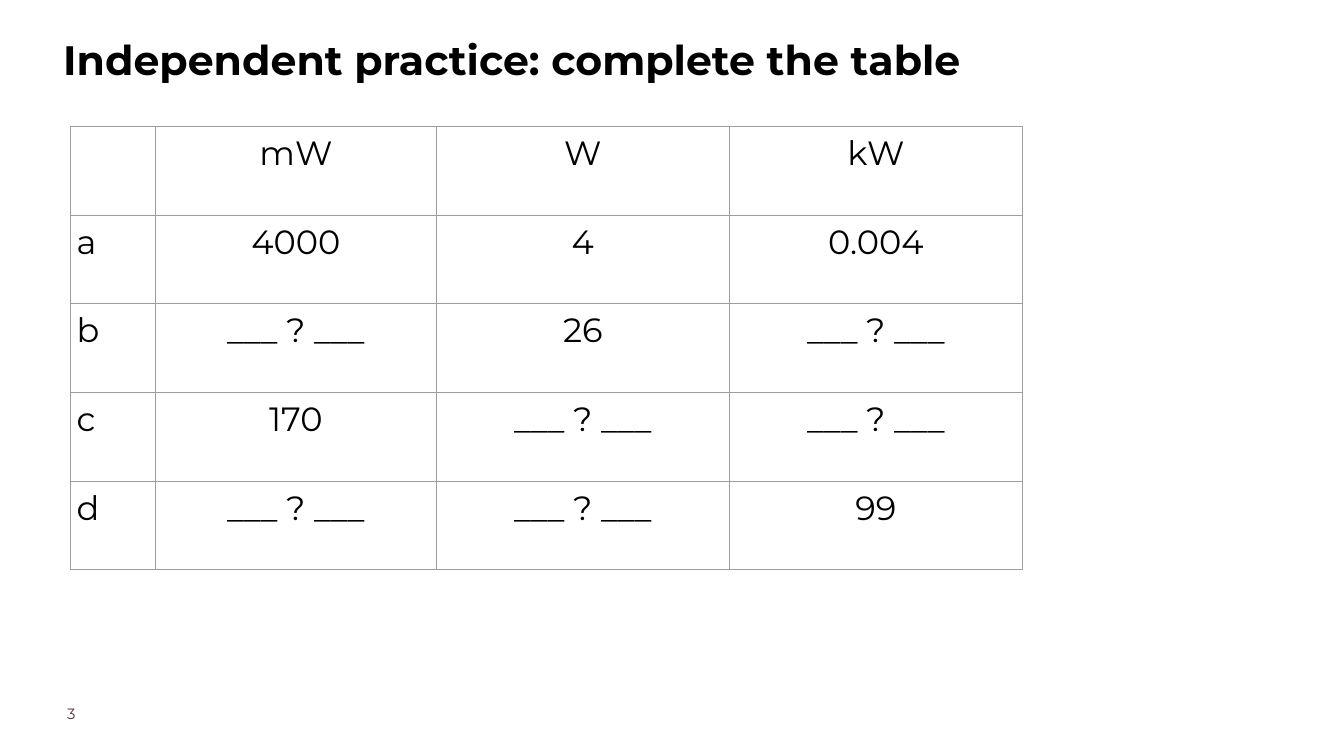
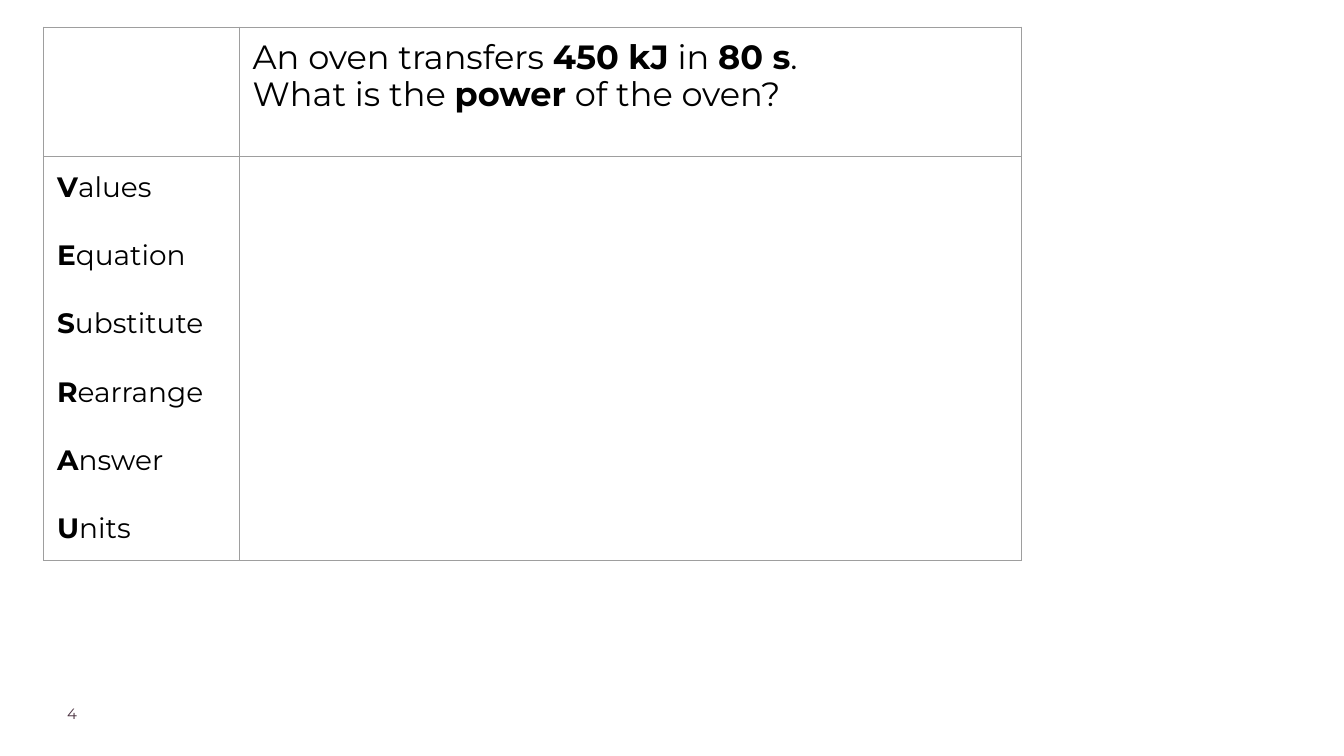
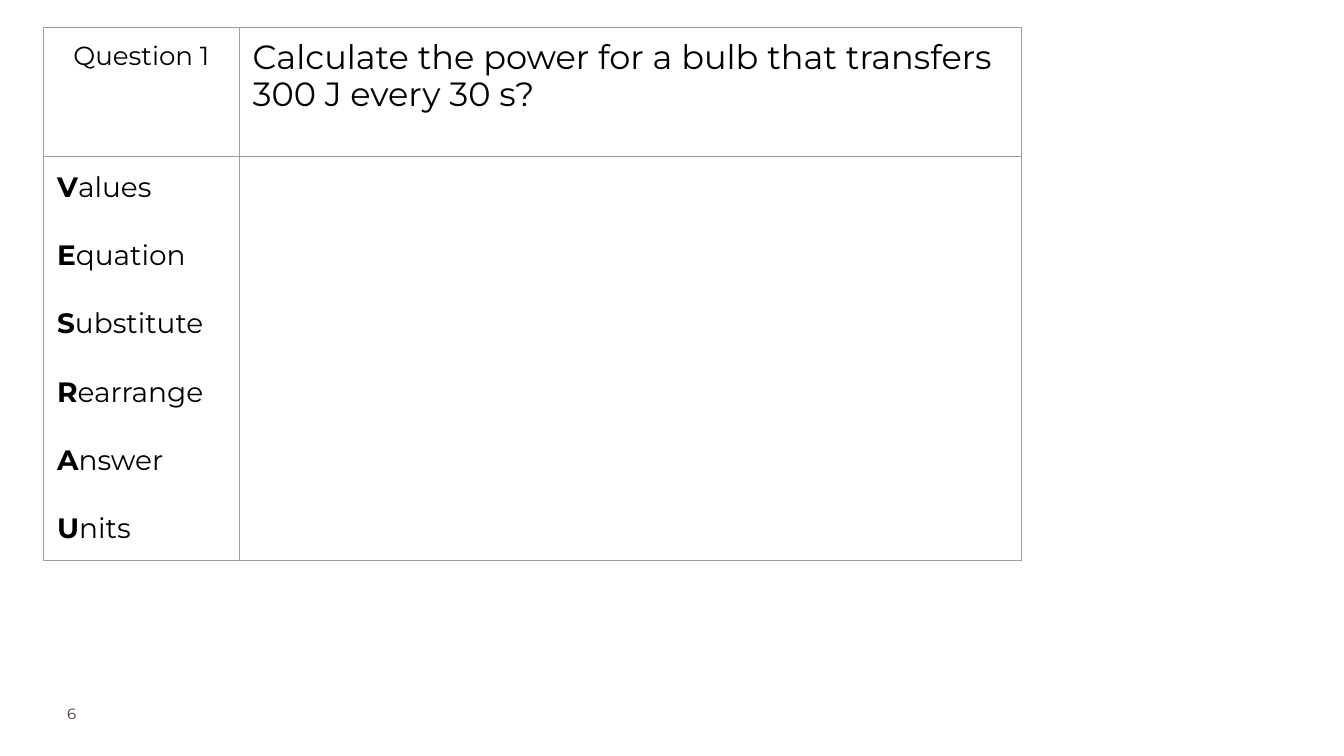
from dataclasses import dataclass

from lxml.etree import SubElement
from pptx import Presentation
from pptx.dml.color import RGBColor
from pptx.enum.text import MSO_ANCHOR, PP_ALIGN as Align
from pptx.oxml.ns import qn
from pptx.util import Pt

FONT = "Montserrat"
BLACK = "000000"
PLUM = "4B3241"
GREY = "9E9E9E"
WHITE = "FFFFFF"
BORDER_WIDTH = 0.75
BLANK_LAYOUT = 6
GAP = "___ ? ___"


@dataclass(frozen=True)
class TextStyle:
    size: float
    color: str = BLACK
    bold: bool = False
    align: Align = Align.LEFT
    line_spacing: float = 1.0
    space_between: float = 0


@dataclass(frozen=True)
class CellText:
    lines: tuple[str, ...]
    style: TextStyle


@dataclass(frozen=True)
class Grid:
    left: float
    top: float
    columns: tuple[float, ...]
    rows: tuple[float, ...]
    inset: float


TITLE = TextStyle(44, bold=True, line_spacing=1.15)
PAGE_NUMBER = TextStyle(16, PLUM)
ROW_LABEL = TextStyle(36)
VALUE = TextStyle(36, align=Align.CENTER)
QUESTION = TextStyle(36, line_spacing=0.9)
QUESTION_LABEL = TextStyle(28, align=Align.CENTER)
STEP = TextStyle(30, space_between=36.5)

UNITS_GRID = Grid(75, 135.4, (91.5, 301, 314, 314), (95,) * 5, 7.2)
PROBLEM_GRID = Grid(46.8, 28.8, (209.5, 838), (139.2, 432), 14.4)

UNIT_ROWS = (
    ("", "mW", "W", "kW"),
    ("a", "4000", "4", "0.004"),
    ("b", GAP, "26", GAP),
    ("c", "170", GAP, GAP),
    ("d", GAP, GAP, "99"),
)
STEPS = ("Values", "Equation", "Substitute", "Rearrange", "Answer", "Units")


def rgb(color: str) -> RGBColor:
    return RGBColor.from_string(color)


def write(frame, lines: tuple[str, ...], style: TextStyle) -> None:
    """Fill a text frame; ** toggles bold and a newline breaks the line."""
    for index, line in enumerate(lines):
        paragraph = frame.add_paragraph() if index else frame.paragraphs[0]
        paragraph.alignment = style.align
        paragraph.line_spacing = style.line_spacing
        paragraph.space_before = Pt(style.space_between if index else 0)
        font = paragraph.font
        font.name, font.size, font.bold = FONT, Pt(style.size), style.bold
        font.color.rgb = rgb(style.color)
        for number, piece in enumerate(line.split("**")):
            for part_number, part in enumerate(piece.split("\n")):
                if part_number:
                    paragraph.add_line_break()
                if part:
                    run = paragraph.add_run()
                    run.text = part
                    if number % 2:
                        run.font.bold = True


def add_text(slide, left: float, top: float, width: float, height: float,
             text: str, style: TextStyle) -> None:
    box = slide.shapes.add_textbox(Pt(left), Pt(top), Pt(width), Pt(height))
    frame = box.text_frame
    frame.word_wrap = True
    frame.margin_left = frame.margin_right = Pt(0)
    frame.margin_top = frame.margin_bottom = Pt(0)
    write(frame, (text,), style)


def add_borders(cell) -> None:
    properties = cell._tc.get_or_add_tcPr()
    for position, side in enumerate(("lnL", "lnR", "lnT", "lnB")):
        line = properties.makeelement(qn(f"a:{side}"), {"w": str(Pt(BORDER_WIDTH))})
        fill = SubElement(line, qn("a:solidFill"))
        SubElement(fill, qn("a:srgbClr"), val=GREY)
        properties.insert(position, line)


def add_grid(slide, grid: Grid, contents: list[list[CellText]]) -> None:
    table = slide.shapes.add_table(
        len(grid.rows), len(grid.columns), Pt(grid.left), Pt(grid.top),
        Pt(sum(grid.columns)), Pt(sum(grid.rows))).table
    table.first_row = table.horz_banding = False
    for column, width in zip(table.columns, grid.columns):
        column.width = Pt(width)
    for row, height, texts in zip(table.rows, grid.rows, contents):
        row.height = Pt(height)
        for cell, text in zip(row.cells, texts):
            cell.fill.background()
            cell.vertical_anchor = MSO_ANCHOR.TOP
            cell.margin_left = cell.margin_right = Pt(grid.inset)
            cell.margin_top = cell.margin_bottom = Pt(grid.inset)
            add_borders(cell)
            write(cell.text_frame, text.lines, text.style)


def add_page(presentation, number: int):
    slide = presentation.slides.add_slide(presentation.slide_layouts[BLANK_LAYOUT])
    slide.background.fill.solid()
    slide.background.fill.fore_color.rgb = rgb(WHITE)
    add_text(slide, 72, 754.5, 113, 28, str(number), PAGE_NUMBER)
    return slide


def add_units_slide(presentation) -> None:
    slide = add_page(presentation, 3)
    add_text(slide, 67.7, 28.8, 1027.5, 57.6,
             "Independent practice: complete the table", TITLE)
    contents = [[CellText((text,), VALUE if column else ROW_LABEL)
                 for column, text in enumerate(row)] for row in UNIT_ROWS]
    add_grid(slide, UNITS_GRID, contents)


def add_problem_slide(presentation, number: int, label: str, question: str) -> None:
    slide = add_page(presentation, number)
    steps = tuple(f"**{step[0]}**{step[1:]}" for step in STEPS)
    add_grid(slide, PROBLEM_GRID, [
        [CellText((label,), QUESTION_LABEL), CellText((question,), QUESTION)],
        [CellText(steps, STEP), CellText(("",), QUESTION)],
    ])


def main() -> None:
    presentation = Presentation()
    presentation.slide_width, presentation.slide_height = Pt(1440), Pt(810)

    # Unit conversions
    add_units_slide(presentation)

    # Power calculations
    add_problem_slide(
        presentation, 4, "",
        "An oven transfers **450 kJ** in **80 s**.\nWhat is the **power** of the oven?")
    add_problem_slide(
        presentation, 6, "Question 1",
        "Calculate the power for a bulb that transfers 300 J every 30 s?")

    presentation.save("out.pptx")


if __name__ == "__main__":
    main()
